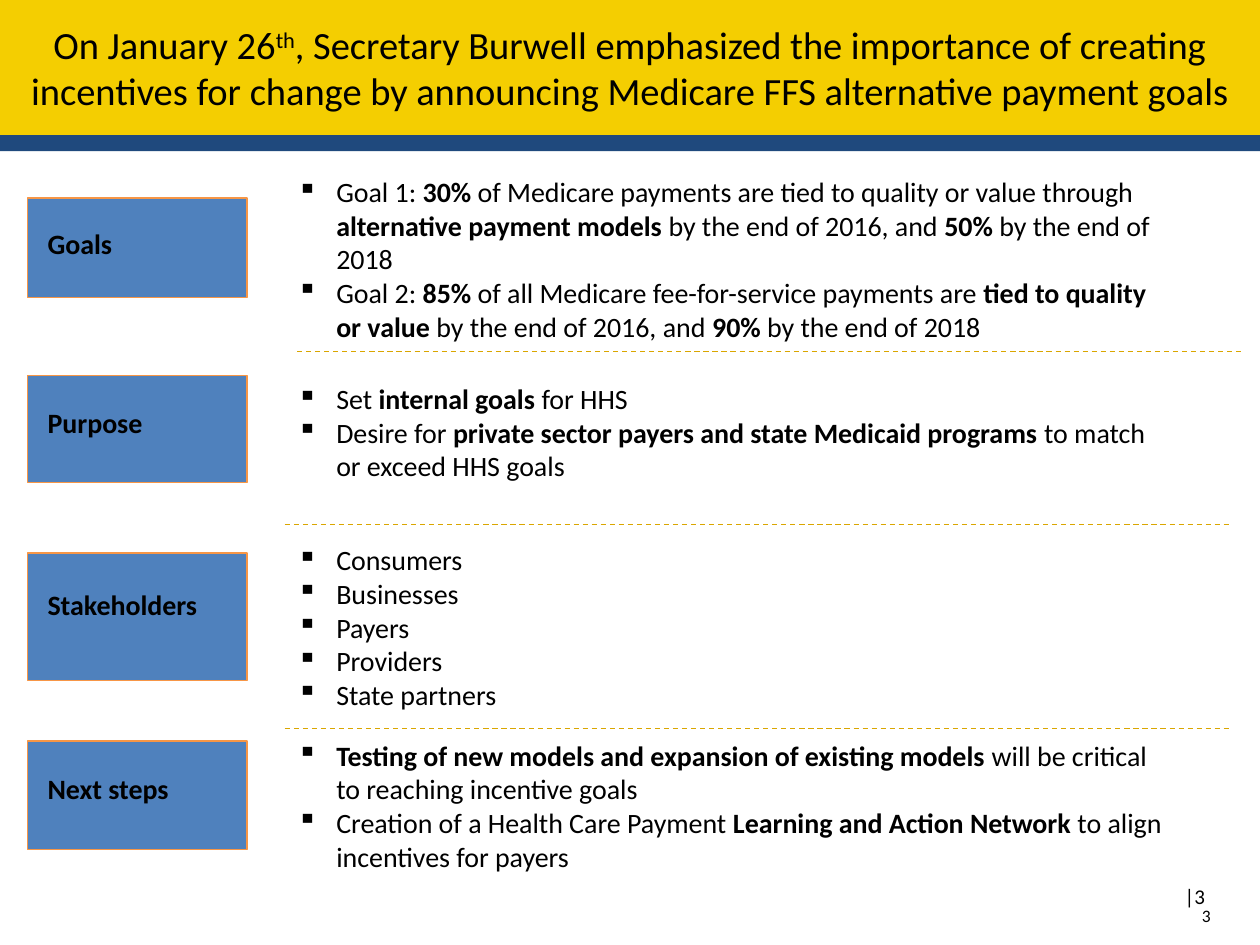
from dataclasses import dataclass

from lxml import etree
from pptx import Presentation
from pptx.dml.color import RGBColor
from pptx.enum.dml import MSO_LINE
from pptx.enum.shapes import MSO_CONNECTOR, MSO_SHAPE
from pptx.enum.text import MSO_ANCHOR, PP_ALIGN
from pptx.oxml.ns import qn
from pptx.util import Cm, Pt

RECTANGLE = MSO_SHAPE.RECTANGLE
STRAIGHT = MSO_CONNECTOR.STRAIGHT
DASH = MSO_LINE.DASH
TOP, MIDDLE = MSO_ANCHOR.TOP, MSO_ANCHOR.MIDDLE
LEFT, CENTER, RIGHT = PP_ALIGN.LEFT, PP_ALIGN.CENTER, PP_ALIGN.RIGHT

FONT = "Calibri"
COLORS = {
    "title": "F4CE01",
    "band": "1F497D",
    "label": "4F81BD",
    "label_edge": "F79646",
    "rule": "DAA600",
    "text": "000000",
}
SLIDE_WIDTH, SLIDE_HEIGHT = 25.4, 19.05
LABEL_LEFT, LABEL_WIDTH = 0.56, 4.42
BODY_LEFT, BODY_WIDTH = 5.74, 18.03
RULE_LENGTH = 19.05
BULLET_INDENT = 0.79


@dataclass
class Section:
    """One row; lengths in cm, bold passages between double asterisks."""
    label: str
    box_top: float
    box_height: float
    label_top: float
    label_height: float
    body_top: float
    body_height: float
    bullets: list[str]


@dataclass
class Rule:
    left: float
    top: float


SECTIONS = [
    Section("Goals", 3.99, 2.01, 4.45, 1.09, 3.4, 4.37, [
        "Goal 1: **30% **of Medicare payments are tied to quality or value through "
        "**alternative payment models **by the end of 2016, and **50% **by the end of 2018",
        "Goal 2: **85% **of all Medicare fee-for-service payments are "
        "**tied to quality or value **by the end of 2016, and **90%** by the end of 2018",
    ]),
    Section("Purpose", 7.57, 2.16, 8.05, 1.17, 7.57, 2.31, [
        "Set **internal goals **for HHS",
        "Desire for **private sector payers and state Medicaid programs **"
        "to match or exceed HHS goals",
    ]),
    Section("Stakeholders", 11.15, 2.57, 11.71, 1.4, 10.82, 3.68, [
        "Consumers", "Businesses", "Payers", "Providers", "State partners",
    ]),
    Section("Next steps", 14.94, 2.18, 15.42, 1.19, 14.76, 3.0, [
        "**Testing of new models and expansion of existing models **"
        "will be critical to reaching incentive goals",
        "Creation of a Health Care Payment **Learning and Action Network **"
        "to align incentives for payers",
    ]),
]
RULES = [Rule(5.99, 7.09), Rule(BODY_LEFT, 10.57), Rule(BODY_LEFT, 14.68)]


def color(name: str) -> RGBColor:
    return RGBColor.from_string(COLORS[name])


def add_bullet(paragraph) -> None:
    properties = paragraph._p.get_or_add_pPr()
    properties.set("marL", str(Cm(BULLET_INDENT)))
    properties.set("indent", str(-Cm(BULLET_INDENT)))
    etree.SubElement(properties, qn("a:buChar")).set("char", "▪")


def write(shape, paragraphs: list[str], *, size: float = 16, align=LEFT, anchor=TOP,
          bulleted: bool = False, inset: bool = True, wrap: bool = True) -> None:
    """Fill a shape with text: ** switches bold, ^ switches superscript."""
    frame = shape.text_frame
    frame.word_wrap = wrap
    frame.vertical_anchor = anchor
    if not inset:
        frame.margin_left = frame.margin_right = frame.margin_top = frame.margin_bottom = 0
    for index, text in enumerate(paragraphs):
        paragraph = frame.add_paragraph() if index else frame.paragraphs[0]
        paragraph.alignment = align
        if bulleted:
            add_bullet(paragraph)
        for bold_index, passage in enumerate(text.split("**")):
            for raised_index, words in enumerate(passage.split("^")):
                if not words:
                    continue
                run = paragraph.add_run()
                run.text = words
                run.font.name = FONT
                run.font.size = Pt(size)
                run.font.bold = bold_index % 2 == 1
                run.font.color.rgb = color("text")
                if raised_index % 2:
                    run._r.get_or_add_rPr().set("baseline", "30000")


def add_rectangle(shapes, left: float, top: float, width: float, height: float,
                  fill: str, edge: str | None = None):
    shape = shapes.add_shape(RECTANGLE, Cm(left), Cm(top), Cm(width), Cm(height))
    shape.shadow.inherit = False
    shape.fill.solid()
    shape.fill.fore_color.rgb = color(fill)
    if edge:
        shape.line.color.rgb = color(edge)
        shape.line.width = Pt(0.75)
    else:
        shape.line.fill.background()
    return shape


def add_text(shapes, left: float, top: float, width: float, height: float,
             paragraphs: list[str], **text_format) -> None:
    box = shapes.add_textbox(Cm(left), Cm(top), Cm(width), Cm(height))
    write(box, paragraphs, **text_format)


def add_section(slide, section: Section) -> None:
    group = slide.shapes.add_group_shape()
    add_rectangle(group.shapes, LABEL_LEFT, section.box_top, LABEL_WIDTH,
                  section.box_height, "label", "label_edge")
    add_text(group.shapes, LABEL_LEFT + 0.15, section.label_top, LABEL_WIDTH - 0.33,
             section.label_height, [f"**{section.label}**"])
    add_text(slide.shapes, BODY_LEFT, section.body_top, BODY_WIDTH,
             section.body_height, section.bullets, bulleted=True)


def add_rule(slide, rule: Rule) -> None:
    connector = slide.shapes.add_connector(
        STRAIGHT, Cm(rule.left), Cm(rule.top), Cm(rule.left + RULE_LENGTH), Cm(rule.top))
    connector.line.color.rgb = color("rule")
    connector.line.width = Pt(0.75)
    connector.line.dash_style = DASH
    etree.SubElement(connector._element.spPr, qn("a:effectLst"))


def main() -> None:
    presentation = Presentation()
    presentation.slide_width = Cm(SLIDE_WIDTH)
    presentation.slide_height = Cm(SLIDE_HEIGHT)
    slide = presentation.slides.add_slide(presentation.slide_layouts[6])

    # Title over the blue band
    add_rectangle(slide.shapes, 0, 2.03, SLIDE_WIDTH, 1.02, "band")
    title = add_rectangle(slide.shapes, 0, 0, SLIDE_WIDTH, 2.72, "title")
    write(title, ["On January 26^th^, Secretary Burwell emphasized the importance of "
                  "creating incentives for change by announcing Medicare FFS "
                  "alternative payment goals"],
          size=22, align=CENTER, anchor=MIDDLE, inset=False)

    # Labelled sections and the dashed rules between them
    for section in SECTIONS:
        add_section(slide, section)
    for rule in RULES:
        add_rule(slide, rule)

    # Page numbers
    add_text(slide.shapes, 22.28, 17.68, 2.26, 0.76, ["|3"], size=12, align=RIGHT)
    add_text(slide.shapes, 24.23, 18.24, 0.58, 0.43, ["3"], size=10, anchor=MIDDLE,
             inset=False, wrap=False)

    presentation.save("out.pptx")


if __name__ == "__main__":
    main()
